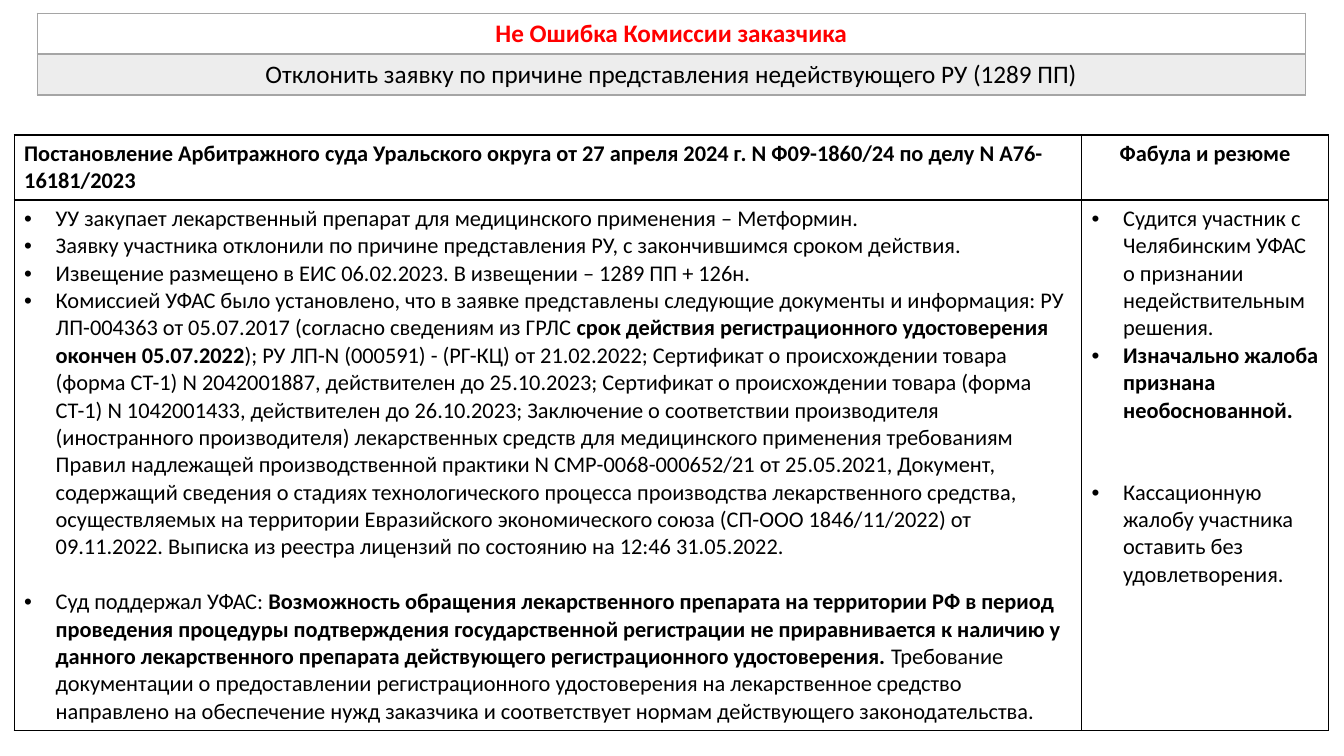
from dataclasses import dataclass

import lxml.etree
import pptx
import pptx.dml.color
import pptx.enum.text
import pptx.oxml.ns
import pptx.table
import pptx.util

Pt = pptx.util.Pt
CENTER = pptx.enum.text.PP_ALIGN.CENTER
LEFT = pptx.enum.text.PP_ALIGN.LEFT
BLACK, RED, GRAY, PALE_GRAY = "000000", "FF0000", "A5A5A5", "EDEDED"
BULLET_INDENT = 22.5
LINE = 19.5


@dataclass(frozen=True)
class Span:
    text: str
    bold: bool = False


@dataclass(frozen=True)
class Para:
    spans: tuple[Span, ...]
    bullet: bool = True
    align: pptx.enum.text.PP_ALIGN = LEFT
    space_before: float = 0


@dataclass(frozen=True)
class CellText:
    paras: tuple[Para, ...]
    size: float = 16
    color: str = BLACK
    fill: str | None = None


@dataclass(frozen=True)
class Grid:
    left: float
    top: float
    columns: tuple[float, ...]
    rows: tuple[float, ...]
    border: str
    cells: tuple[tuple[CellText, ...], ...]


def heading(text: str, bold: bool = True, align=CENTER) -> tuple[Para, ...]:
    return (Para((Span(text, bold),), bullet=False, align=align),)


def rgb(value: str) -> pptx.dml.color.RGBColor:
    return pptx.dml.color.RGBColor.from_string(value)


def add_child(parent, tag: str, **attributes: str):
    return lxml.etree.SubElement(parent, pptx.oxml.ns.qn(tag), attributes)


def set_borders(cell: pptx.table._Cell, color: str) -> None:
    properties = cell._tc.get_or_add_tcPr()
    for side in ("a:lnL", "a:lnR", "a:lnT", "a:lnB"):
        line = add_child(properties, side, w=str(Pt(1)))
        add_child(add_child(line, "a:solidFill"), "a:srgbClr", val=color)


def set_bullet(paragraph) -> None:
    properties = paragraph._p.get_or_add_pPr()
    properties.set("marL", str(Pt(BULLET_INDENT)))
    properties.set("indent", str(-Pt(BULLET_INDENT)))
    add_child(properties, "a:buFont", typeface="Arial")
    add_child(properties, "a:buChar", char="•")


def fill_cell(cell: pptx.table._Cell, content: CellText, border: str) -> None:
    set_borders(cell, border)
    if content.fill:
        cell.fill.solid()
        cell.fill.fore_color.rgb = rgb(content.fill)
    else:
        cell.fill.background()
    frame = cell.text_frame
    for index, para in enumerate(content.paras):
        paragraph = frame.add_paragraph() if index else frame.paragraphs[0]
        if para.bullet:
            set_bullet(paragraph)
        paragraph.alignment = para.align
        paragraph.space_before = Pt(para.space_before)
        paragraph.font.name = "Calibri"
        paragraph.font.size = Pt(content.size)
        paragraph.font.color.rgb = rgb(content.color)
        for span in para.spans:
            run = paragraph.add_run()
            run.text = span.text
            run.font.bold = span.bold


def add_grid(page, grid: Grid) -> None:
    table = page.shapes.add_table(
        len(grid.rows), len(grid.columns), Pt(grid.left), Pt(grid.top),
        Pt(sum(grid.columns)), Pt(sum(grid.rows))).table
    table.first_row = table.horz_banding = False
    for column, width in zip(table.columns, grid.columns):
        column.width = Pt(width)
    for row, height, contents in zip(table.rows, grid.rows, grid.cells):
        row.height = Pt(height)
        for cell, content in zip(row.cells, contents):
            fill_cell(cell, content, grid.border)


CASE_FACTS = (
    Para((Span("УУ закупает лекарственный препарат для медицинского применения – Метформин."),)),
    Para((Span("Заявку участника отклонили по причине представления РУ, с закончившимся сроком действия."),)),
    Para((Span("Извещение размещено в ЕИС 06.02.2023. В извещении – 1289 ПП + 126н."),)),
    Para((
        Span("Комиссией УФАС было установлено, что в заявке представлены следующие документы и "
             "информация: РУ ЛП-004363 от 05.07.2017 (согласно сведениям из ГРЛС "),
        Span("срок действия регистрационного удостоверения окончен 05.07.2022", True),
        Span("); РУ ЛП-N (000591) - (РГ-КЦ) от 21.02.2022; Сертификат о происхождении товара "
             "(форма СТ-1) N 2042001887, действителен до 25.10.2023; Сертификат о происхождении "
             "товара (форма СТ-1) N 1042001433, действителен до 26.10.2023; Заключение о "
             "соответствии производителя (иностранного производителя) лекарственных средств для "
             "медицинского применения требованиям Правил надлежащей производственной практики "
             "N СМР-0068-000652/21 от 25.05.2021, Документ, содержащий сведения о стадиях "
             "технологического процесса производства лекарственного средства, осуществляемых на "
             "территории Евразийского экономического союза (СП-ООО 1846/11/2022) от 09.11.2022. "
             "Выписка из реестра лицензий по состоянию на 12:46 31.05.2022."),
    )),
    Para((
        Span("Суд поддержал УФАС: "),
        Span("Возможность обращения лекарственного препарата на территории РФ в период проведения "
             "процедуры подтверждения государственной регистрации не приравнивается к наличию у "
             "данного лекарственного препарата действующего регистрационного удостоверения.", True),
        Span(" Требование документации о предоставлении регистрационного удостоверения на "
             "лекарственное средство направлено на обеспечение нужд заказчика и соответствует "
             "нормам действующего законодательства."),
    ), space_before=LINE),
)
SUMMARY = (
    Para((Span("Судится участник с Челябинским УФАС о признании недействительным решения."),)),
    Para((Span("Изначально жалоба признана необоснованной.", True),)),
    Para((Span("Кассационную жалобу участника оставить без удовлетворения."),),
         space_before=2 * LINE),
)
RULING = ("Постановление Арбитражного суда Уральского округа от 27 апреля 2024 г. "
          "N Ф09-1860/24 по делу N А76-16181/2023")
REASON = "Отклонить заявку по причине представления недействующего РУ (1289 ПП)"

GRIDS = (
    Grid(26.6, 9.4, (905.8,), (29.2, 29.2), GRAY, (
        (CellText(heading("Не Ошибка Комиссии заказчика"), 18, RED),),
        (CellText(heading(REASON, bold=False), 18, fill=PALE_GRAY),),
    )),
    Grid(10.1, 96.5, (762.5, 176.4), (46.2, 378), BLACK, (
        (CellText(heading(RULING, align=LEFT)), CellText(heading("Фабула и резюме"))),
        (CellText(CASE_FACTS), CellText(SUMMARY)),
    )),
)


def main() -> None:
    deck = pptx.Presentation()
    deck.slide_width, deck.slide_height = Pt(960), Pt(540)
    page = deck.slides.add_slide(deck.slide_layouts[6])
    for grid in GRIDS:
        add_grid(page, grid)
    deck.save("out.pptx")


if __name__ == "__main__":
    main()
